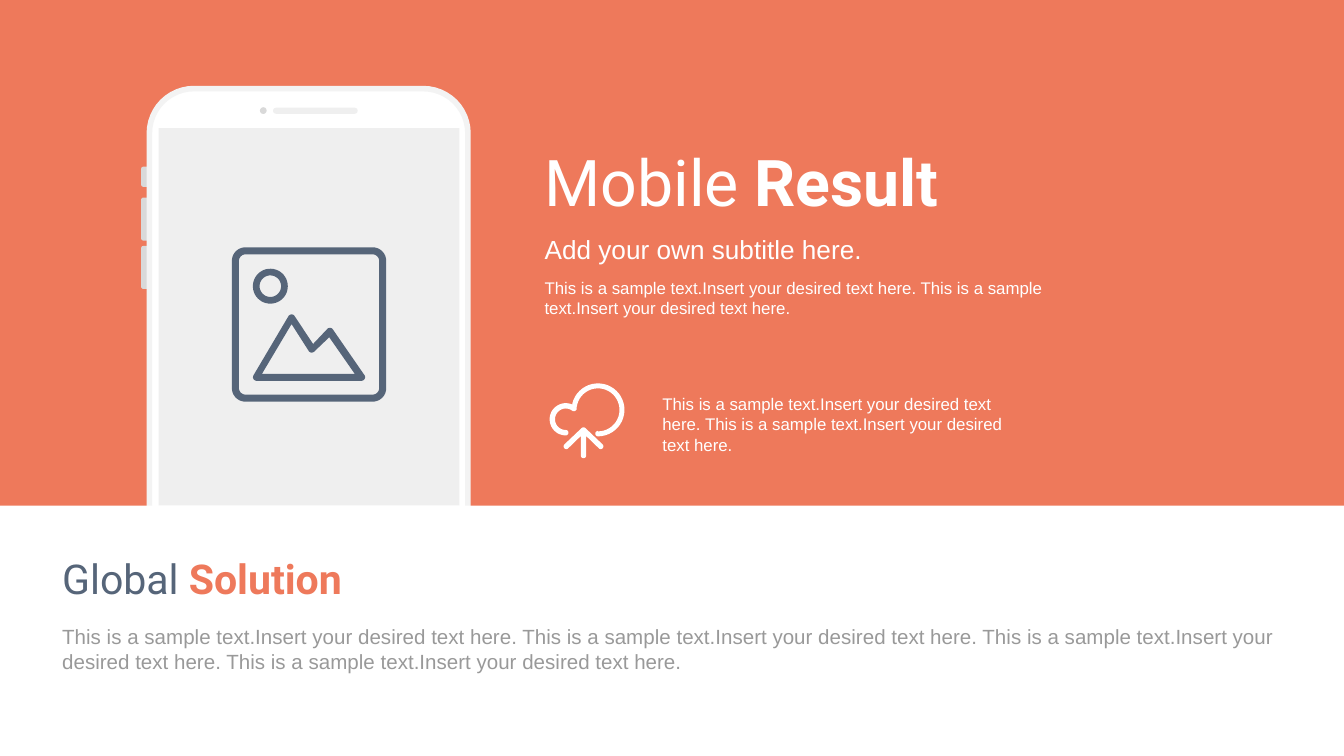
from dataclasses import dataclass
from math import cos, radians, sin

from pptx import Presentation
from pptx.dml.color import RGBColor
from pptx.enum.shapes import MSO_SHAPE
from pptx.enum.text import MSO_ANCHOR
from pptx.util import Inches, Pt

RECT = MSO_SHAPE.RECTANGLE
ROUNDED = MSO_SHAPE.ROUNDED_RECTANGLE
ROUNDED_TOP = MSO_SHAPE.ROUND_2_SAME_RECTANGLE
OVAL = MSO_SHAPE.OVAL
TOP, MIDDLE = MSO_ANCHOR.TOP, MSO_ANCHOR.MIDDLE

WIDTH = Inches(10)
HEIGHT = WIDTH * 9 // 16
CELL = WIDTH / 100  # square grid: 100 columns by 56.25 rows
SAMPLE = "This is a sample text.Insert your desired text here."


@dataclass(frozen=True)
class Theme:
    coral: str = "EE795B"
    slate: str = "566579"
    white: str = "FFFFFF"
    rim: str = "F3F3F3"
    screen: str = "EFEFEF"
    button: str = "D9D9D9"
    muted: str = "999999"
    heading: str = "Roboto"
    body: str = "Arial"
    title: float = 34.5
    section: float = 22
    subtitle: float = 14
    text: float = 11
    small: float = 9


THEME = Theme()


def rgb(color):
    return RGBColor.from_string(color)


def grid(*cells):
    """Turn grid cells into EMU lengths."""
    return [round(c * CELL) for c in cells]


def paint(sp, color):
    sp.shadow.inherit = False
    sp.fill.solid()
    sp.fill.fore_color.rgb = rgb(color)
    sp.line.fill.background()


def add_block(s, kind, box, color, adjustments=()):
    sp = s.shapes.add_shape(kind, *grid(*box))
    for i, value in enumerate(adjustments):
        sp.adjustments[i] = value
    paint(sp, color)
    return sp


def add_text(s, box, parts, font, size, color, anchor=TOP):
    """Write one paragraph; parts are (words, bold) pairs."""
    tf = s.shapes.add_textbox(*grid(*box)).text_frame
    tf.word_wrap = True
    tf.vertical_anchor = anchor
    tf.margin_left = tf.margin_right = tf.margin_top = tf.margin_bottom = Inches(0.1)
    p = tf.paragraphs[0]
    p.font.name, p.font.size, p.font.color.rgb = font, Pt(size), rgb(color)
    for words, bold in parts:
        r = p.add_run()
        r.text = words
        if bold:
            r.font.bold = True
    return p


def arc(cx, cy, radius, start, end):
    """Points on an arc; degrees run clockwise from the right."""
    steps = max(4, round(abs(end - start) / 8))
    angles = [radians(start + (end - start) * i / steps) for i in range(steps + 1)]
    return [(cx + radius * cos(a), cy + radius * sin(a)) for a in angles]


def rounded_square(cx, cy, half, radius):
    d = half - radius
    corners = ((d, d), (-d, d), (-d, -d), (d, -d))
    return [pt for i, (dx, dy) in enumerate(corners)
            for pt in arc(cx + dx, cy + dy, radius, 90 * i, 90 * i + 90)]


def add_outline(s, contours, color):
    """Fill closed contours as one shape; inner contours become holes."""
    contours = [[grid(*pt) for pt in contour] for contour in contours]
    builder = s.shapes.build_freeform(*contours[0][0])
    for i, (first, *rest) in enumerate(contours):
        if i:
            builder.move_to(*first)
        builder.add_line_segments(rest, close=True)
    paint(builder.convert_to_shape(), color)


def add_phone(s):
    for top, height in ((12.4, 1.5), (14.7, 3.2), (18.3, 3.2)):
        add_block(s, ROUNDED, (10.5, top, 1, height), THEME.button, (0.17,))
    body = add_block(s, ROUNDED_TOP, (11.12, 6.6, 23.7, 31.4), THEME.white, (0.14, 0))
    body.line.color.rgb = rgb(THEME.rim)
    body.line.width = Pt(3)
    add_block(s, RECT, (0, 37.62, 100, 18.63), THEME.white)


def add_phone_face(s):
    add_block(s, OVAL, (19.34, 7.98, 0.5, 0.5), THEME.button)
    add_block(s, ROUNDED, (20.32, 8.02, 6.3, 0.45), THEME.screen, (0.5,))
    add_block(s, RECT, (11.8, 9.54, 22.38, 28.08), THEME.screen)


def add_photo_icon(s):
    cx, cy = 23, 24.15
    frame = [rounded_square(cx, cy, 5.74, 1), rounded_square(cx, cy, 5.22, 0.5)]
    sun = [arc(20.12, 21.3, radius, 0, 360) for radius in (1.3, 0.8)]
    mountains = [
        arc(19.1, 28.07, 0.27, 90, 210) + arc(21.7, 23.67, 0.27, 210, 325)
        + [(23.3, 25.6)] + arc(24.55, 24.67, 0.27, 225, 325)
        + arc(26.9, 28.07, 0.27, -35, 90),
        [(19.5, 27.82), (21.7, 24.12)] + arc(23.2, 25.97, 0.27, 145, 45)
        + [(24.5, 25.1), (26.4, 27.82)],
    ]
    add_outline(s, frame + sun + mountains, THEME.slate)


def add_upload_icon(s):
    big, small, cap = (44.5, 30.5), (42.1, 31.2), 0.2
    cloud = (arc(*big, 1.97, 90, -166) + arc(*small, 1.2, -65, -270)
             + arc(42.1, 32.2, cap, 90, -90) + arc(*small, 0.8, -270, -50)
             + arc(42.7, 30.4, cap, 115, 0) + arc(*big, 1.6, -180, 90)
             + arc(44.5, 32.27, cap, -90, -270))
    arrow = (arc(43.42, 32, cap, -135, -45) + arc(44.7, 33.22, cap, -45, 135)
             + [(43.62, 32.45)] + arc(43.42, 33.9, cap, 0, 180)
             + [(43.22, 32.45)] + arc(42.14, 33.22, cap, 45, 225))
    for contour in (cloud, arrow):
        add_outline(s, [contour], THEME.white)


def add_copy(s):
    t = THEME
    two, four = [(" ".join([SAMPLE] * n), False) for n in (2, 4)]
    add_text(s, (3.64, 45.44, 93.2, 5.7), [four], t.body, t.text, t.muted)
    p = add_text(s, (3.64, 41.2, 93.2, 3.7), [("Global ", False), ("Solution", True)],
                 t.heading, t.section, t.slate, MIDDLE)
    p.runs[1].font.color.rgb = rgb(t.coral)
    add_text(s, (39.54, 9.54, 42, 8.5), [("Mobile ", False), ("Result", True)],
             t.heading, t.title, t.white)
    add_text(s, (39.54, 19.66, 42, 5.3), [two], t.body, t.small, t.white)
    add_text(s, (39.54, 16.74, 42, 3.6), [("Add your own subtitle here.", False)],
             t.body, t.subtitle, t.white, MIDDLE)


def add_upload_note(s):
    words = " ".join([SAMPLE] * 2)
    add_text(s, (48.3, 28.3, 28.1, 6.1), [(words, False)],
             THEME.body, THEME.small, THEME.white)


def main():
    prs = Presentation()
    prs.slide_width, prs.slide_height = WIDTH, HEIGHT
    s = prs.slides.add_slide(prs.slide_layouts[6])
    s.background.fill.solid()
    s.background.fill.fore_color.rgb = rgb(THEME.coral)
    add_phone(s)
    add_upload_icon(s)
    add_copy(s)
    add_phone_face(s)
    add_photo_icon(s)
    add_upload_note(s)
    prs.save("out.pptx")


if __name__ == "__main__":
    main()
